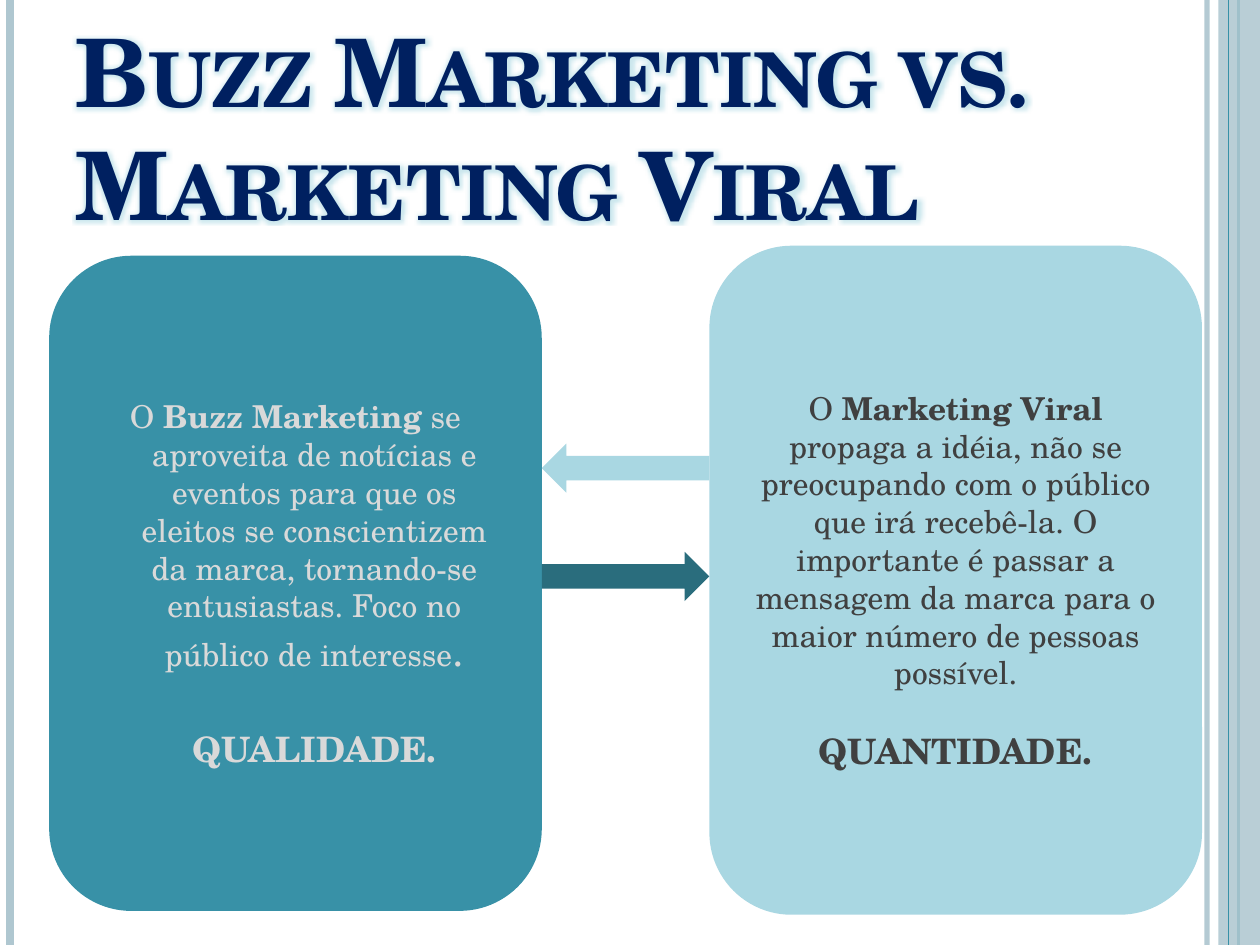
from dataclasses import dataclass

from lxml import etree
from pptx import Presentation
from pptx.dml.color import RGBColor
from pptx.enum.shapes import MSO_CONNECTOR, MSO_SHAPE
from pptx.enum.text import MSO_ANCHOR, PP_ALIGN
from pptx.oxml.ns import qn
from pptx.util import Inches, Pt

STRAIGHT = MSO_CONNECTOR.STRAIGHT
RECTANGLE = MSO_SHAPE.RECTANGLE
ROUNDED = MSO_SHAPE.ROUNDED_RECTANGLE
LEFT_ARROW = MSO_SHAPE.LEFT_ARROW
RIGHT_ARROW = MSO_SHAPE.RIGHT_ARROW
MIDDLE, BOTTOM = MSO_ANCHOR.MIDDLE, MSO_ANCHOR.BOTTOM
CENTER = PP_ALIGN.CENTER


@dataclass(frozen=True)
class Theme:
    font: str = "TeX Gyre Schola"
    navy: str = "002060"
    teal: str = "3891A7"
    dark_teal: str = "2A6D7D"
    pale_blue: str = "A9D7E2"
    gray_blue: str = "AFC7D0"
    light_text: str = "D9D9D9"
    dark_text: str = "404040"
    title_size: int = 54
    body_size: int = 18
    stop_size: int = 24
    keyword_size: int = 20


class SlideBuilder:
    def __init__(self, slide, theme, height):
        self.slide = slide
        self.theme = theme
        self.height = height

    def set_alpha(self, fill_parent, percent):
        color = fill_parent.find(".//" + qn("a:srgbClr"))
        etree.SubElement(color, qn("a:alpha"), val=str(percent * 1000))

    def vertical_line(self, x, color, width, alpha=100):
        line = self.slide.shapes.add_connector(
            STRAIGHT, Inches(x), 0, Inches(x), Inches(self.height))
        line.line.color.rgb = RGBColor.from_string(color)
        line.line.width = Pt(width)
        properties = line._element.spPr
        if alpha < 100:
            self.set_alpha(properties, alpha)
        etree.SubElement(properties, qn("a:effectLst"))

    def block(self, kind, left, top, width, height, color, alpha=100):
        shape = self.slide.shapes.add_shape(
            kind, Inches(left), Inches(top), Inches(width), Inches(height))
        shape.shadow.inherit = False
        shape.fill.solid()
        shape.fill.fore_color.rgb = RGBColor.from_string(color)
        shape.line.fill.background()
        if alpha < 100:
            self.set_alpha(shape._element.spPr, alpha)
        return shape

    def title(self, text, left, top, width, height):
        theme = self.theme
        box = self.slide.shapes.add_textbox(
            Inches(left), Inches(top), Inches(width), Inches(height))
        frame = box.text_frame
        frame.word_wrap = True
        frame.vertical_anchor = BOTTOM
        run = frame.paragraphs[0].add_run()
        run.text = text
        run.font.size = Pt(theme.title_size)
        run.font.bold = True
        run.font.color.rgb = RGBColor.from_string(theme.navy)
        # Small capitals, thin outline and soft glow
        properties = run.font._element
        properties.set("cap", "small")
        outline = etree.Element(qn("a:ln"), w=str(Pt(0.75)))
        outline_fill = etree.SubElement(outline, qn("a:solidFill"))
        etree.SubElement(outline_fill, qn("a:srgbClr"), val=theme.dark_teal)
        properties.insert(0, outline)
        effects = etree.SubElement(properties, qn("a:effectLst"))
        glow = etree.SubElement(effects, qn("a:glow"), rad=str(Pt(4)))
        etree.SubElement(glow, qn("a:srgbClr"), val=theme.pale_blue)
        self.set_alpha(glow, 60)
        run.font.name = theme.font

    def panel(self, position, color, text_color, runs, keyword, gap, hanging=0):
        """Rounded panel; runs holds (text, bold, size) tuples."""
        theme = self.theme
        frame = self.block(ROUNDED, *position, color).text_frame
        frame.word_wrap = True
        frame.vertical_anchor = MIDDLE
        description, conclusion = frame.paragraphs[0], frame.add_paragraph()
        for text, bold, size in runs:
            run = description.add_run()
            run.text = text
            run.font.bold = bold
            run.font.size = Pt(size)
        conclusion.add_run().text = keyword
        conclusion.font.bold = True
        conclusion.font.size = Pt(theme.keyword_size)
        conclusion.space_before = Pt(gap)
        for paragraph in (description, conclusion):
            paragraph.alignment = CENTER
            paragraph.font.name = theme.font
            paragraph.font.color.rgb = RGBColor.from_string(text_color)
            if hanging:
                paragraph._p.get_or_add_pPr().set("marL", str(Inches(hanging)))
        if hanging:
            description._p.pPr.set("indent", str(-Inches(hanging)))


def main():
    width, height = 10, 7.5
    presentation = Presentation()
    presentation.slide_width = Inches(width)
    presentation.slide_height = Inches(height)
    slide = presentation.slides.add_slide(presentation.slide_layouts[6])
    theme = Theme()
    builder = SlideBuilder(slide, theme, height)

    # Side bands
    builder.vertical_line(9.58, theme.gray_blue, 3, alpha=93)
    builder.vertical_line(0.08, theme.gray_blue, 4.5)
    builder.vertical_line(9.83, theme.teal, 1.5)
    builder.block(RECTANGLE, 9.67, 0, 0.33, height, theme.gray_blue, alpha=87)
    builder.vertical_line(9.75, theme.teal, 0.75)

    # Title
    builder.title("Buzz Marketing vs. Marketing Viral", 0.5, 0.3, 8.17, 1.65)

    # Compared concepts
    panel_width, buzz_left, viral_left = 3.91, 0.39, 5.63
    body = theme.body_size
    builder.panel(
        (buzz_left, 2.03, panel_width, 5.2), theme.teal, theme.light_text,
        [("O ", False, body),
         ("Buzz Marketing", True, body),
         (" se aproveita de notícias e eventos para que os eleitos se "
          "conscientizem da marca, tornando-se entusiastas. Foco no público "
          "de interesse", False, body),
         (".", False, theme.stop_size)],
        "QUALIDADE.", gap=30, hanging=0.3)
    builder.panel(
        (viral_left, 1.95, panel_width, 5.31), theme.pale_blue, theme.dark_text,
        [("O ", False, body),
         ("Marketing Viral ", True, body),
         ("propaga a idéia, não se preocupando com o público que irá "
          "recebê-la. O importante é passar a mensagem da marca para o maior "
          "número de pessoas possível.", False, body)],
        "QUANTIDADE.", gap=22)

    # Arrows spanning the space between the panels
    arrow_left = buzz_left + panel_width
    arrow_width = viral_left - arrow_left
    for kind, top, color in ((LEFT_ARROW, 3.52, theme.pale_blue),
                             (RIGHT_ARROW, 4.38, theme.dark_teal)):
        builder.block(kind, arrow_left, top, arrow_width, 0.39, color)

    presentation.save("out.pptx")


if __name__ == "__main__":
    main()
